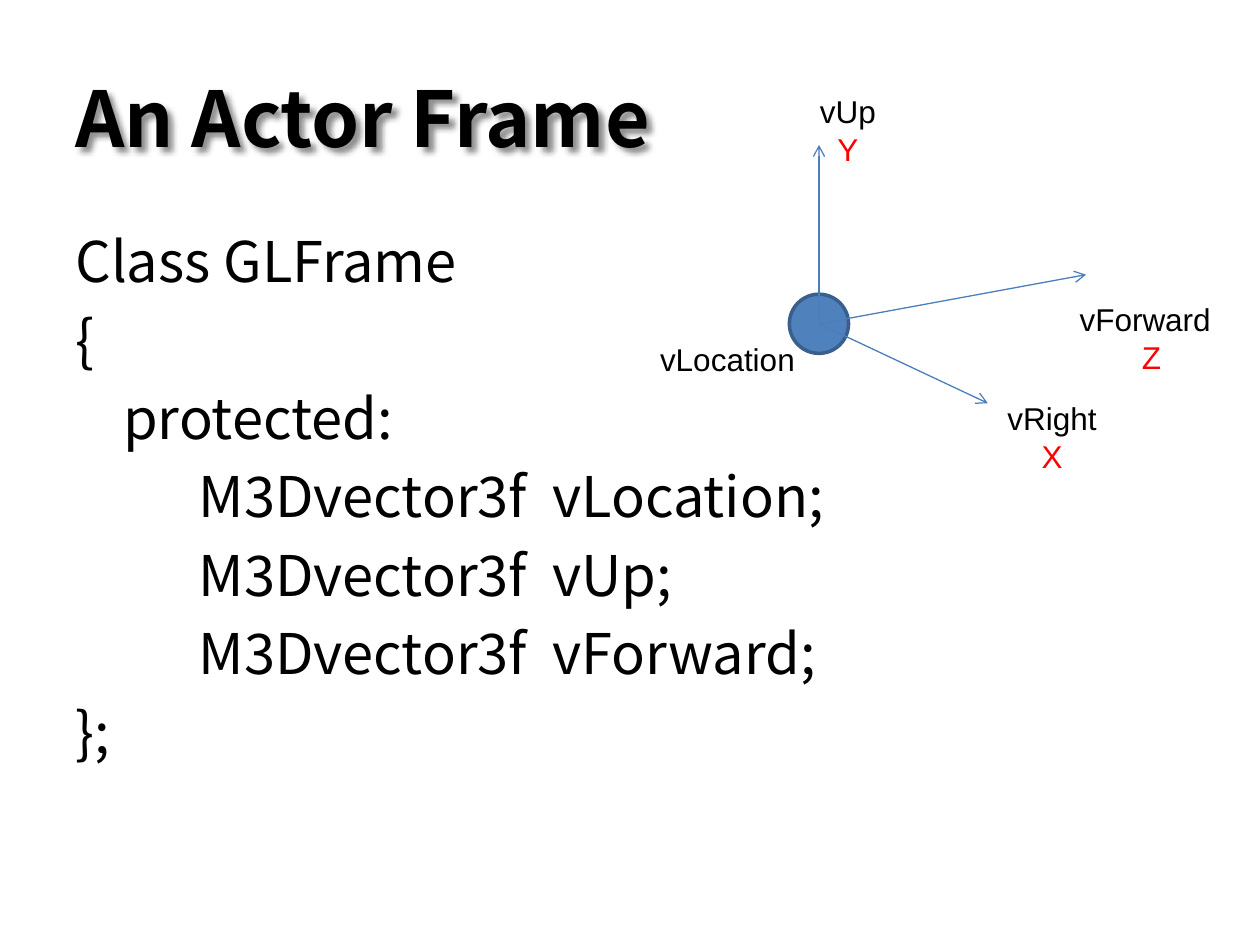
from dataclasses import dataclass

from lxml import etree
from pptx import Presentation
from pptx.dml.color import RGBColor
from pptx.enum import shapes, text
from pptx.oxml import ns
from pptx.util import Inches, Pt


@dataclass(frozen=True)
class Theme:
    ink: str = "000000"
    axis: str = "FF0000"
    ball: str = "4F81BD"
    edge: str = "3A5F8C"
    ray: str = "4B7EBC"
    sans: str = "Noto Sans CJK SC"
    tag: str = "Arial"
    head: int = 44
    code: int = 32
    note: int = 18


LOOK = Theme()
LEFT, MID = text.PP_ALIGN.LEFT, text.PP_ALIGN.CENTER


def paint(hue):
    return RGBColor.from_string(hue)


def node(host, tag, **attrs):
    return etree.SubElement(host, ns.qn(tag), attrs)


def add_run(para, words, face, size, hue, bold=False):
    run = para.add_run()
    run.text = words
    font = run.font
    font.name, font.size, font.bold = face, Pt(size), bold
    font.color.rgb = paint(hue)
    latin = run._r.rPr.find(ns.qn("a:latin"))
    east = etree.Element(ns.qn("a:ea"), {"typeface": face})
    latin.addnext(east)


def next_para(frame, index):
    return frame.add_paragraph() if index else frame.paragraphs[0]


def add_title(slide, box, words):
    title = slide.shapes.title
    title.left, title.top, title.width, title.height = map(Inches, box)
    frame = title.text_frame
    frame.vertical_anchor = text.MSO_ANCHOR.MIDDLE
    frame.auto_size = text.MSO_AUTO_SIZE.NONE
    para = frame.paragraphs[0]
    para.alignment = LEFT
    add_run(para, words, LOOK.sans, LOOK.head, LOOK.ink, True)
    glow = node(title._element.spPr, "a:effectLst")
    shade = node(glow, "a:outerShdw", blurRad="38100", dist="38100",
                 dir="2700000", algn="tl")
    tone = node(shade, "a:srgbClr", val="000000")
    node(tone, "a:alpha", val="43000")


def add_code(slide, box, lines):
    frame = slide.shapes.add_textbox(*map(Inches, box)).text_frame
    frame.word_wrap = True
    for index, line in enumerate(lines):
        para = next_para(frame, index)
        props = para._p.get_or_add_pPr()
        props.set("marL", str(Inches(0.38)))
        props.set("indent", str(Inches(-0.38)))
        if index:
            para.space_before = Pt(LOOK.code * 0.2)
        add_run(para, line, LOOK.sans, LOOK.code, LOOK.ink)


def add_ray(slide, start, end):
    ray = slide.shapes.add_connector(
        shapes.MSO_CONNECTOR.STRAIGHT, *map(Inches, (*start, *end)))
    ray.line.color.rgb = paint(LOOK.ray)
    ray.line.width = Pt(0.75)
    node(ray.line._get_or_add_ln(), "a:tailEnd", type="arrow")
    node(ray._element.spPr, "a:effectLst")


def add_tag(slide, spot, name, axis=None, align=MID):
    high = 0.71 if axis else 0.4
    box = slide.shapes.add_textbox(*map(Inches, (*spot, 1.34, high)))
    frame = box.text_frame
    frame.word_wrap = True
    frame.auto_size = text.MSO_AUTO_SIZE.SHAPE_TO_FIT_TEXT
    rows = [(name, LOOK.ink, align)]
    if axis:
        rows.append((axis, LOOK.axis, MID))
    for index, (words, hue, side) in enumerate(rows):
        para = next_para(frame, index)
        para.alignment = side
        add_run(para, words, LOOK.tag, LOOK.note, hue)


def add_axes(slide, box):
    left, top = box[:2]

    def place(x, y):
        return left + x, top + y

    hub = place(1.36, 1.89)
    size = 0.47
    ball = slide.shapes.add_shape(
        shapes.MSO_SHAPE.OVAL,
        *map(Inches, (hub[0] - size / 2, hub[1] - size / 2, size, size)))
    ball.shadow.inherit = False
    ball.fill.solid()
    ball.fill.fore_color.rgb = paint(LOOK.ball)
    ball.line.color.rgb = paint(LOOK.edge)
    ball.line.width = Pt(2)
    for tip in ((3.48, 1.5), (1.36, 0.47), (2.7, 2.52)):
        add_ray(slide, hub, place(*tip))
    add_tag(slide, place(3.33, 1.65), "vForward", "Z", LEFT)
    add_tag(slide, place(0.92, 0), "vUp", "Y")
    add_tag(slide, place(0, 1.97), "vLocation", align=LEFT)
    add_tag(slide, place(2.54, 2.44), "vRight", "X")


def main():
    deck = Presentation()
    deck.slide_width, deck.slide_height = Inches(10), Inches(7.5)
    slide = deck.slides.add_slide(deck.slide_layouts[5])
    add_title(slide, (0.5, 0.3, 7.18, 1.25), "An Actor Frame")
    fields = ("vLocation", "vUp", "vForward")
    add_code(slide, (0.5, 1.75, 9, 4.95), [
        "Class GLFrame", "{", "\tprotected:",
        *(f"\t\t M3Dvector3f  {field};" for field in fields), "};"])
    add_axes(slide, (5.14, 0.68, 4.67, 3.15))
    deck.save("out.pptx")


if __name__ == "__main__":
    main()
